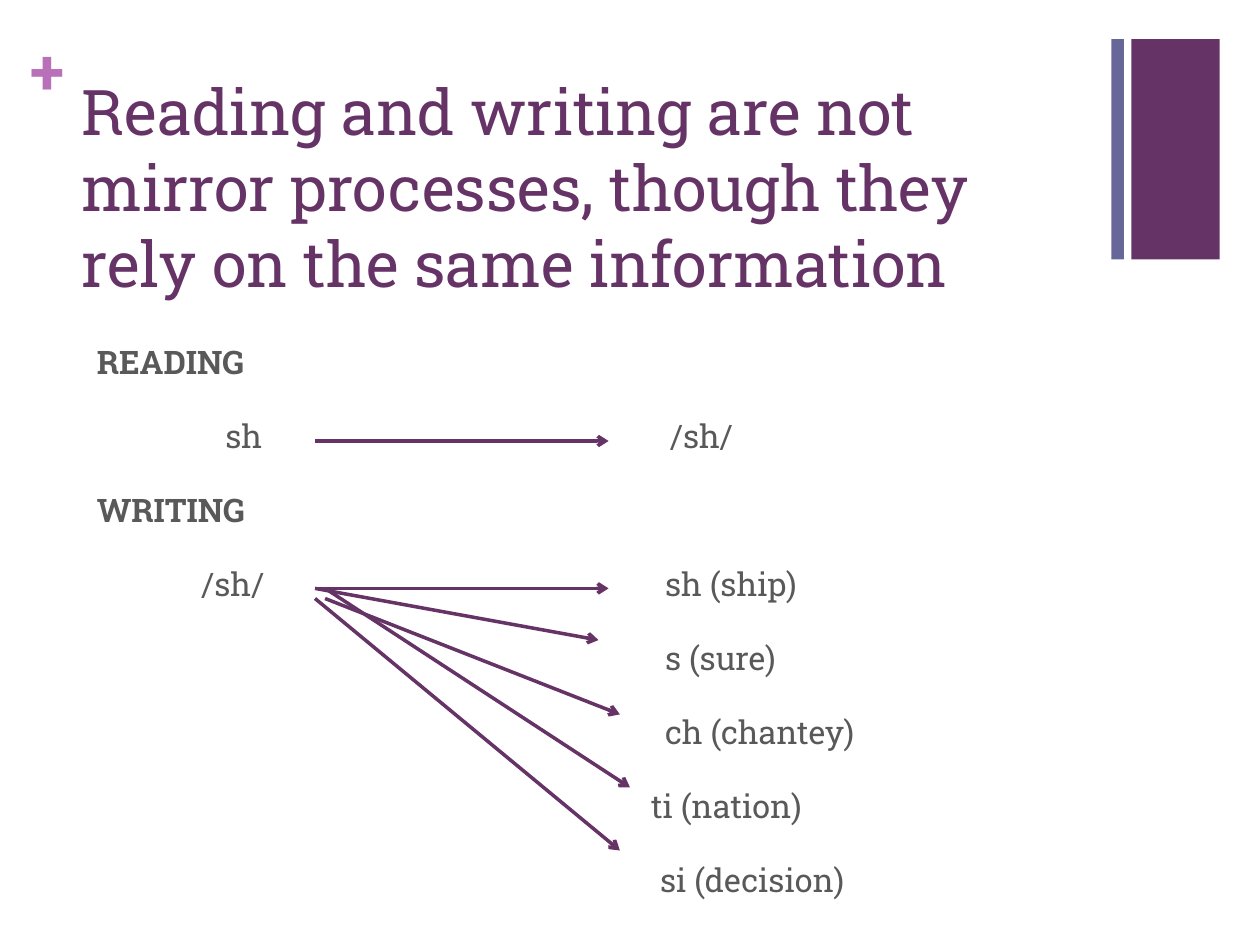
from pptx import Presentation
from pptx import util as u
from pptx.dml.color import RGBColor
from pptx.enum import shapes, text
from pptx.oxml.ns import qn
from lxml import etree

FONT = "Roboto Slab"
PLUM, SLATE, ORCHID, GRAY = "663366", "666699", "B870B8", "595959"

BARS = [((8.98, 0.31, 0.7, 1.75), PLUM), ((8.82, 0.31, 0.1, 1.75), SLATE)]

TITLE = "Reading and writing are not mirror processes, though they rely on the same information"

BODY_LEFT, BODY_TOP, ROW_PITCH = 0.67, 2.67, 0.587
ROWS = [
    ("READING", 0, True),
    ("sh", 1.02, False),
    ("WRITING", 0, True),
    ("/sh/", 0.83, False),
    ("s (sure)", 4.51, False),
    ("ch (chantey)", 4.51, False),
    ("ti (nation)", 4.4, False),
    ("si (decision)", 4.47, False),
]
ANSWERS = [(1, "/sh/", 4.55), (3, "sh (ship)", 4.51)]

ARROWS = [
    ((2.5, 3.5), (4.83, 3.5)),
    ((2.5, 4.67), (4.83, 4.67)),
    ((2.5, 4.67), (4.75, 5.08)),
    ((2.58, 4.67), (5, 6.25)),
    ((2.58, 4.75), (4.92, 5.67)),
    ((2.5, 4.75), (4.92, 6.75)),
]


def color(value):
    """Turn a hex string into a colour."""
    return RGBColor.from_string(value)


def inches(values):
    """Turn plain numbers into lengths."""
    return [u.Inches(value) for value in values]


def set_all(target, values):
    """Set each attribute named in a dict."""
    for name, value in values.items():
        setattr(target, name, value)


def add_bar(page, place, fill):
    """Add a plain filled rectangle."""
    bar = page.shapes.add_shape(shapes.MSO_SHAPE.RECTANGLE, *inches(place))
    bar.shadow.inherit = False
    bar.fill.solid()
    bar.fill.fore_color.rgb = color(fill)
    bar.line.fill.background()


def add_box(page, place, **frame_format):
    """Add a wrapping text box and return its frame."""
    frame = page.shapes.add_textbox(*inches(place)).text_frame
    set_all(frame, {"word_wrap": True, "vertical_anchor": text.MSO_ANCHOR.TOP, **frame_format})
    return frame


def add_span(para, words, size, ink, bold=False):
    """Add formatted words to a paragraph."""
    span = para.add_run()
    span.text = words
    set_all(span.font, {"name": FONT, "size": u.Pt(size), "bold": bold})
    span.font.color.rgb = color(ink)


def add_rows(page):
    """Add the headings and the indented letters and sounds."""
    frame = add_box(page, (BODY_LEFT, BODY_TOP, 8.5, 4.5))
    for index, (words, indent, bold) in enumerate(ROWS):
        para = frame.add_paragraph() if index else frame.paragraphs[0]
        para.space_before = u.Pt(20)
        settings = para._p.get_or_add_pPr()
        settings.set("marL", str(u.Inches(indent)))
        settings.set("indent", "0")
        add_span(para, words, 18.5, GRAY, bold)


def add_answer(page, row, words, indent):
    """Add the right-hand partner of a row."""
    frame = add_box(page, (BODY_LEFT + indent, BODY_TOP + row * ROW_PITCH, 2, 0.44))
    add_span(frame.paragraphs[0], words, 18.5, GRAY)


def add_arrow(page, start, end):
    """Add a straight line with an open arrowhead."""
    arrow = page.shapes.add_connector(shapes.MSO_CONNECTOR.STRAIGHT, *inches(start + end))
    arrow.line.width = u.Pt(2)
    arrow.line.color.rgb = color(PLUM)
    etree.SubElement(arrow.line._get_or_add_ln(), qn("a:tailEnd"), type="arrow")
    etree.SubElement(arrow._element.spPr, qn("a:effectLst"))


def main():
    """Build the slide and save it."""
    deck = Presentation()
    set_all(deck, {"slide_width": u.Inches(10), "slide_height": u.Inches(7.5)})
    page = deck.slides.add_slide(deck.slide_layouts[6])
    for place, fill in BARS:
        add_bar(page, place, fill)
    margins = dict.fromkeys(("margin_left", "margin_top", "margin_right", "margin_bottom"), 0)
    plus = add_box(page, (0.24, 0.25, 0.29, 0.61), **margins)
    add_span(plus.paragraphs[0], "+", 36, ORCHID, bold=True)
    title = add_box(page, (0.55, 0.53, 8.26, 1.22))
    add_span(title.paragraphs[0], TITLE, 36, PLUM)
    add_rows(page)
    for answer in ANSWERS:
        add_answer(page, *answer)
    for start, end in ARROWS:
        add_arrow(page, start, end)
    deck.save("out.pptx")


if __name__ == "__main__":
    main()
